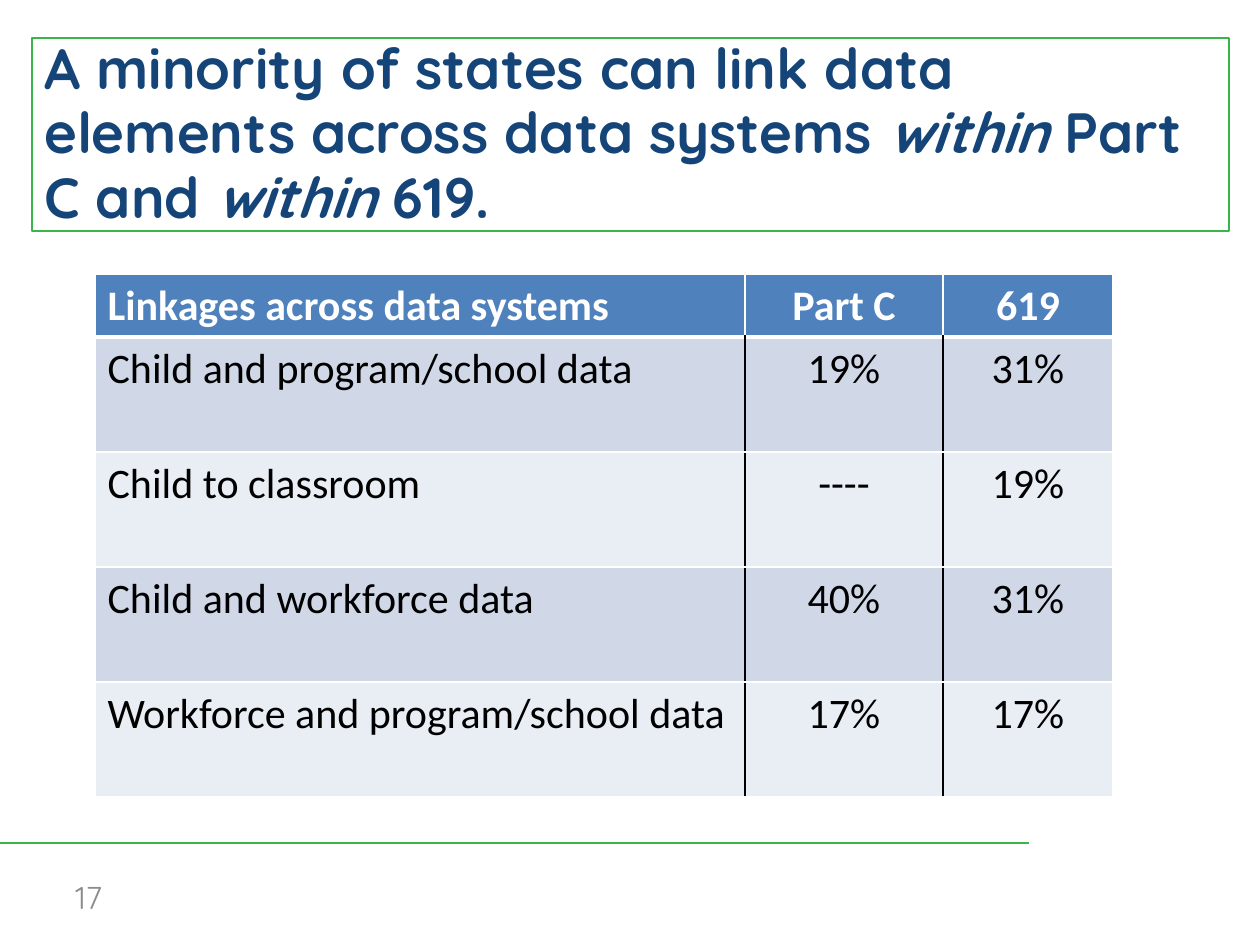
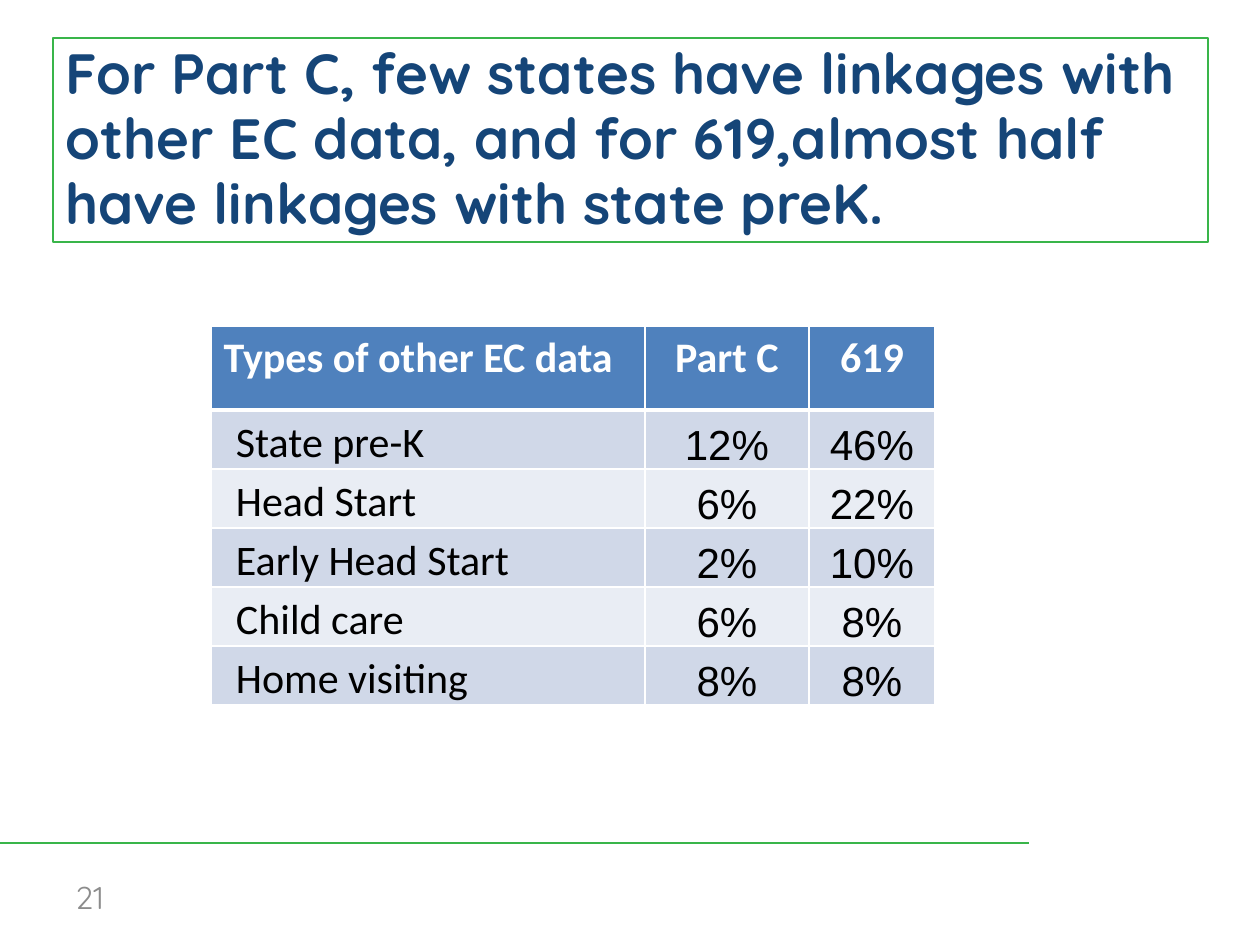
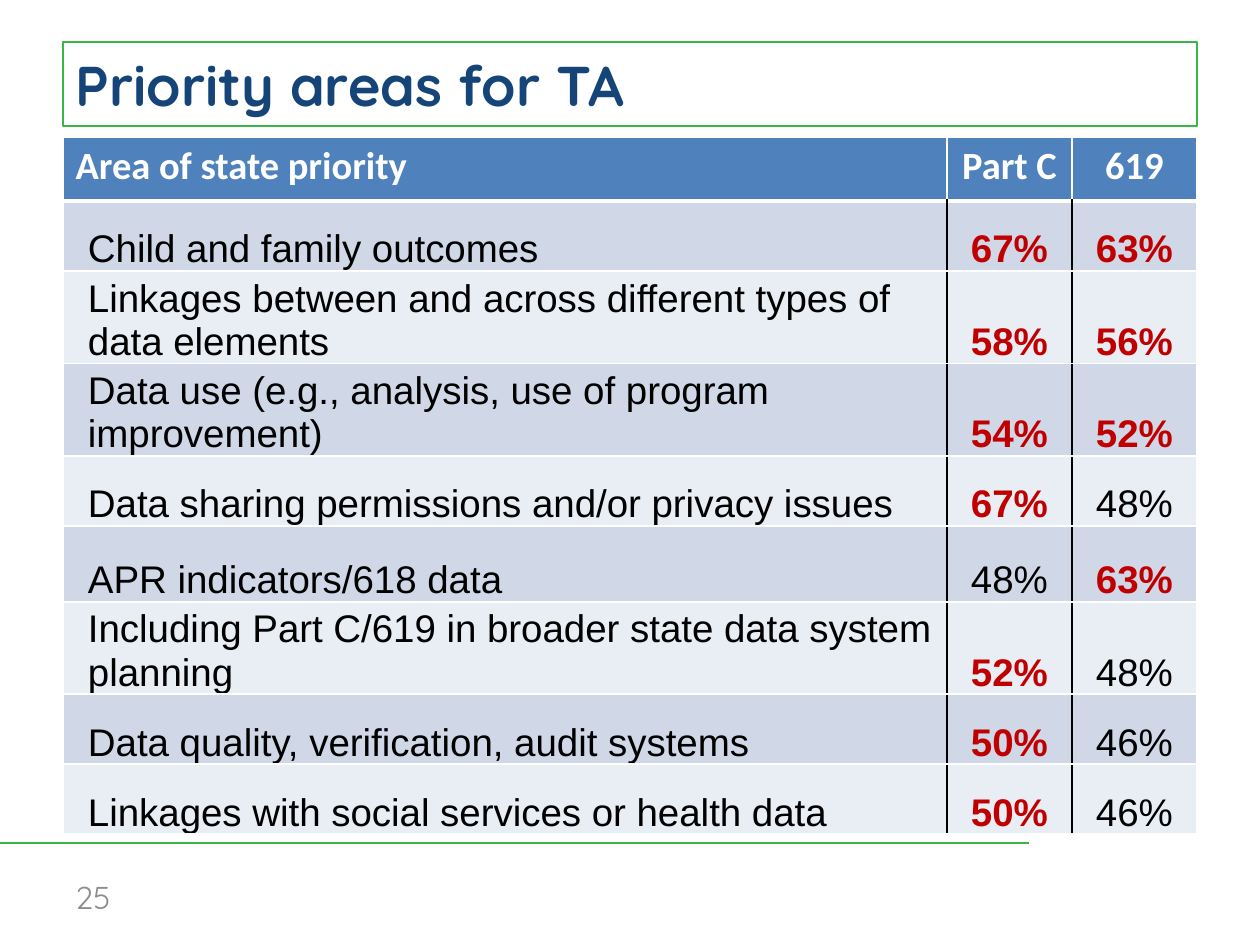
from lxml import etree
from pptx import Presentation
from pptx.dml.color import RGBColor
from pptx.enum.shapes import MSO_CONNECTOR, MSO_SHAPE
from pptx.enum.text import MSO_ANCHOR, PP_ALIGN
from pptx.oxml.ns import qn
from pptx.util import Pt

LEFT, CENTER = PP_ALIGN.LEFT, PP_ALIGN.CENTER
TOP, MIDDLE, BOTTOM = MSO_ANCHOR.TOP, MSO_ANCHOR.MIDDLE, MSO_ANCHOR.BOTTOM
RECT, STRAIGHT = MSO_SHAPE.RECTANGLE, MSO_CONNECTOR.STRAIGHT

GREEN = RGBColor(0x39, 0xB5, 0x4A)
NAVY = RGBColor(0x15, 0x45, 0x78)
GRAY = RGBColor(0x8C, 0x8C, 0x8C)
BLUE = RGBColor(0x4F, 0x81, 0xBD)
BAND_DARK = RGBColor(0xD0, 0xD8, 0xE8)
BAND_LIGHT = RGBColor(0xE9, 0xED, 0xF4)
RED = RGBColor(0xC0, 0x00, 0x00)
BLACK = RGBColor(0, 0, 0)
WHITE = RGBColor(0xFF, 0xFF, 0xFF)

HEAD_FONT, TABLE_FONT, VALUE_FONT = "Quicksand", "Calibri", "Arial"
WIDTH, HEIGHT = 1260, 945
EMU_PER_PX = 914400 / 126


def px(n):
    return round(n * EMU_PER_PX)


def set_font(p, name, size, color, bold=False):
    f = p.font
    f.name, f.size, f.bold = name, Pt(size), bold
    f.color.rgb = color


def set_border(cell, side, color, width):
    ln = etree.SubElement(cell._tc.get_or_add_tcPr(), qn(f"a:ln{side}"), w=str(Pt(width)))
    fill = etree.SubElement(ln, qn("a:solidFill"))
    etree.SubElement(fill, qn("a:srgbClr"), val=str(color))


class Deck:
    def __init__(self):
        self.prs = Presentation()
        self.prs.slide_width, self.prs.slide_height = px(WIDTH), px(HEIGHT)
        self.s = None

    def slide(self, number):
        self.s = self.prs.slides.add_slide(self.prs.slide_layouts[6])
        self.rule(843, 1029)
        self.page_number(number)

    def rule(self, y, end):
        line = self.s.shapes.add_connector(STRAIGHT, 0, px(y), px(end), px(y))
        line.line.color.rgb = GREEN
        line.line.width = Pt(1.5)
        etree.SubElement(line._element.spPr, qn("a:effectLst"))

    def page_number(self, number):
        tf = self.s.shapes.add_textbox(px(63), px(872), px(293), px(50)).text_frame
        tf.word_wrap, tf.vertical_anchor = True, MIDDLE
        p = tf.paragraphs[0]
        p.text = str(number)
        set_font(p, HEAD_FONT, 18, GRAY)

    def title(self, text, x, y, w, h, size=32.4, spacing=0.95):
        sp = self.s.shapes.add_shape(RECT, px(x), px(y), px(w), px(h))
        sp.shadow.inherit = False
        sp.fill.background()
        sp.line.color.rgb = GREEN
        sp.line.width = Pt(1)
        tf = sp.text_frame
        tf.word_wrap, tf.vertical_anchor = True, MIDDLE
        p = tf.paragraphs[0]
        p.alignment, p.line_spacing = LEFT, spacing
        set_font(p, HEAD_FONT, size, NAVY, True)
        for i, part in enumerate(text.split("*")):
            r = p.add_run()
            r.text = part
            if i % 2:
                r.font.italic = True

    def table(self, rows, x, y, cols, heights, size=24, label_font=TABLE_FONT,
              value_font=VALUE_FONT, divider=BLACK, compact=True, red_from=101):
        tbl = self.s.shapes.add_table(len(rows), len(cols), px(x), px(y),
                                      px(sum(cols)), px(sum(heights))).table
        for col, w in zip(tbl.columns, cols):
            col.width = px(w)
        for row, h in zip(tbl.rows, heights):
            row.height = px(h)
        last = len(cols) - 1
        for i, row in enumerate(rows):
            head = i == 0
            for j, text in enumerate(row):
                cell = tbl.cell(i, j)
                inner = WHITE if head else divider
                set_border(cell, "L", inner if j else WHITE, 1)
                set_border(cell, "R", inner if j < last else WHITE, 1)
                set_border(cell, "T", WHITE, 1)
                set_border(cell, "B", WHITE, 3 if head else 1)
                cell.fill.solid()
                cell.fill.fore_color.rgb = BLUE if head else BAND_DARK if i % 2 else BAND_LIGHT
                p = cell.text_frame.paragraphs[0]
                p.text = text
                p.alignment = CENTER if j else LEFT
                if head:
                    set_font(p, TABLE_FONT, size, WHITE, True)
                    continue
                red = text.endswith("%") and int(text[:-1]) >= red_from
                set_font(p, value_font if j else label_font, size, RED if red else BLACK, red)
                if compact:
                    cell.vertical_anchor = BOTTOM
                    cell.margin_left = cell.margin_right = px(10)
                    cell.margin_top = cell.margin_bottom = 0
                    if j == 0:
                        p._p.get_or_add_pPr().set("marL", str(px(15)))


def main():
    d = Deck()

    d.slide(17)
    d.title("A minority of states can link data elements across data systems "
            "*within* Part C and *within* 619.", 32, 38, 1197, 193)
    d.table([
        ("Linkages across data systems", "Part C", "619"),
        ("Child and program/school data", "19%", "31%"),
        ("Child to classroom", "----", "19%"),
        ("Child and workforce data", "40%", "31%"),
        ("Workforce and program/school data", "17%", "17%"),
    ], 95, 274, [650, 198, 170], [63] + [115] * 4, value_font=TABLE_FONT, compact=False)

    d.slide(21)
    d.title("For Part C, few states have linkages with other EC data, and for "
            "619,almost half have linkages with state preK.", 53, 38, 1155, 204)
    d.table([
        ("Types of other EC data", "Part C", "619"),
        ("State pre-K", "12%", "46%"),
        ("Head Start", "6%", "22%"),
        ("Early Head Start", "2%", "10%"),
        ("Child care", "6%", "8%"),
        ("Home visiting", "8%", "8%"),
    ], 211, 326, [434, 164, 126], [84] + [59] * 5, divider=WHITE)

    d.slide(25)
    d.title("Priority areas for TA", 63, 42, 1134, 84, size=32, spacing=1.0)
    d.table([
        ("Area of state priority", "Part C", "619"),
        ("Child and family outcomes", "67%", "63%"),
        ("Linkages between and across different types of data elements", "58%", "56%"),
        ("Data use (e.g., analysis, use of program improvement)", "54%", "52%"),
        ("Data sharing permissions and/or privacy issues", "67%", "48%"),
        ("APR indicators/618 data", "48%", "63%"),
        ("Including Part C/619 in broader state data system planning", "52%", "48%"),
        ("Data quality, verification, audit systems", "50%", "46%"),
        ("Linkages with social services or health data", "50%", "46%"),
    ], 63, 137, [884, 125, 125], [64, 70, 86, 86, 70, 76, 86, 70, 70],
        size=22, label_font=VALUE_FONT, red_from=50)

    d.prs.save("out.pptx")


if __name__ == "__main__":
    main()
